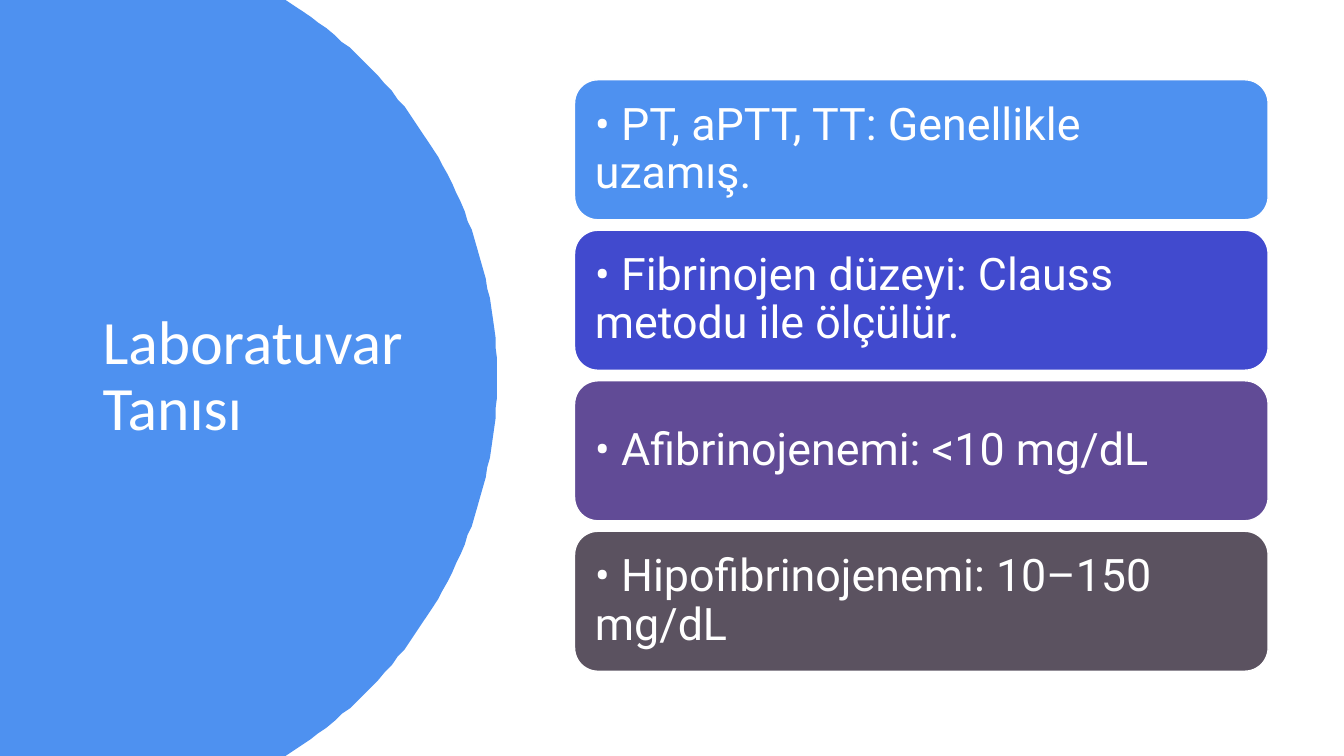
from dataclasses import dataclass
from math import asin, cos, sin

from pptx import Presentation
from pptx.dml.color import RGBColor
from pptx.enum.shapes import MSO_SHAPE
from pptx.enum.text import MSO_ANCHOR, PP_ALIGN
from pptx.util import Pt

SLIDE_WIDTH, SLIDE_HEIGHT = 960, 540
WHITE, BLUE = "FFFFFF", "4E91F0"

# Circle that bounds the title panel
CENTRE_X, RADIUS = 38.3, 316.6
ARC_STEPS = 90

# Column of finding cards
CARD_LEFT, CARD_TOP = 410.4, 57
CARD_WIDTH, CARD_HEIGHT, CARD_PITCH = 495.4, 100, 107.5


@dataclass
class Finding:
    text: str
    color: str


FINDINGS = [
    Finding("• PT, aPTT, TT: Genellikle uzamış.", BLUE),
    Finding("• Fibrinojen düzeyi: Clauss metodu ile ölçülür.", "414ACE"),
    Finding("• Afibrinojenemi: <10 mg/dL", "614B96"),
    Finding("• Hipofibrinojenemi: 10–150 mg/dL", "5B5260"),
]


def paint(color_format, color: str) -> None:
    color_format.rgb = RGBColor.from_string(color)


def fill_shape(shape, color: str) -> None:
    shape.shadow.inherit = False
    shape.fill.solid()
    paint(shape.fill.fore_color, color)


def write(shape, text: str, *, font: str, size: float, color: str = WHITE,
          inset: float = 7.2, space_after: float = 0) -> None:
    frame = shape.text_frame
    frame.word_wrap = True
    frame.vertical_anchor = MSO_ANCHOR.MIDDLE
    frame.margin_left = frame.margin_right = Pt(inset)
    frame.margin_top = frame.margin_bottom = Pt(min(inset, 9.6))
    paragraph = frame.paragraphs[0]
    paragraph.alignment = PP_ALIGN.LEFT
    paragraph.line_spacing = 0.9
    paragraph.space_after = Pt(space_after)
    run = paragraph.add_run()
    run.text = text
    run.font.name = font
    run.font.size = Pt(size)
    paint(run.font.color, color)


def draw_title_panel(slide) -> None:
    middle = SLIDE_HEIGHT / 2
    sweep = asin(middle / RADIUS)
    angles = [sweep * (2 * step / ARC_STEPS - 1) for step in range(ARC_STEPS + 1)]
    arc = [(CENTRE_X + RADIUS * cos(a), middle + RADIUS * sin(a)) for a in angles]
    outline = slide.shapes.build_freeform(0, 0, scale=Pt(1))
    outline.add_line_segments([*arc, (0, SLIDE_HEIGHT)], close=True)
    panel = outline.convert_to_shape()
    fill_shape(panel, BLUE)
    panel.line.fill.background()


def draw_title(slide) -> None:
    title = slide.shapes.add_textbox(Pt(66.2), Pt(50.4), Pt(232.6), Pt(438.5))
    write(title, "Laboratuvar Tanısı", font="Calibri", size=44, inset=7.2)


def draw_finding(slide, finding: Finding, row: int) -> None:
    card = slide.shapes.add_shape(
        MSO_SHAPE.ROUNDED_RECTANGLE, Pt(CARD_LEFT), Pt(CARD_TOP + row * CARD_PITCH),
        Pt(CARD_WIDTH), Pt(CARD_HEIGHT))
    fill_shape(card, finding.color)
    paint(card.line.color, WHITE)
    card.line.width = Pt(1)
    write(card, finding.text, font="Roboto", size=32, inset=9.6)


def main() -> None:
    presentation = Presentation()
    presentation.slide_width = Pt(SLIDE_WIDTH)
    presentation.slide_height = Pt(SLIDE_HEIGHT)
    slide = presentation.slides.add_slide(presentation.slide_layouts[6])

    # Title side
    draw_title_panel(slide)
    draw_title(slide)

    # Laboratory findings
    for row, finding in enumerate(FINDINGS):
        draw_finding(slide, finding, row)

    presentation.save("out.pptx")


if __name__ == "__main__":
    main()
